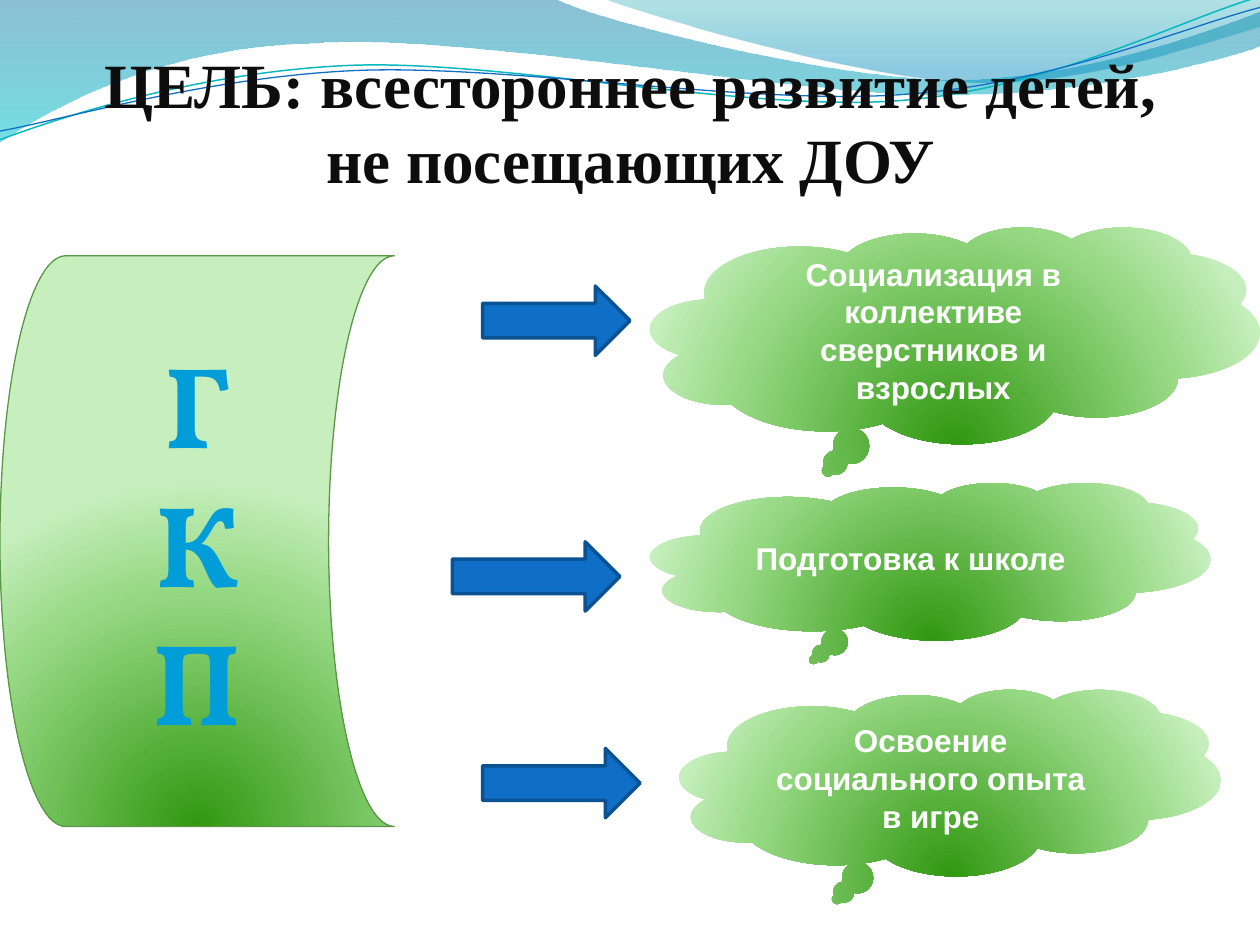
from math import cos, radians, sin
from lxml.etree import SubElement
from pptx import Presentation
from pptx.dml.color import RGBColor
from pptx.enum.shapes import MSO_SHAPE
from pptx.enum.text import MSO_ANCHOR, PP_ALIGN
from pptx.oxml import parse_xml
from pptx.oxml.ns import nsdecls, qn
from pptx.util import Inches, Pt

GREEN = [(0, "319811", 100), (68, "95D882", 100), (100, "C6EFBD", 100)]
RADIAL = '<a:path path="circle"><a:fillToRect l="50000" t="130000" r="50000" b="-30000"/></a:path>'
DOWN = '<a:lin ang="5400000" scaled="0"/>'


def color(code):
    return RGBColor.from_string(code)


def write(shape, text, size=18, font="Arial", ink="FFFFFF", anchor=MSO_ANCHOR.MIDDLE, space=0):
    frame = shape.text_frame
    frame.word_wrap = True
    frame.vertical_anchor = anchor
    para = frame.paragraphs[0]
    para.text = text
    para.alignment = PP_ALIGN.CENTER
    for run in para.runs:
        run.font.size = Pt(size)
        run.font.name = font
        run.font.bold = True
        run.font.color.rgb = color(ink)
        if space:
            run.font._element.set("spc", str(space))
    return frame


def turn(point, pivot, angle):
    dx, dy = point[0] - pivot[0], point[1] - pivot[1]
    c, s = cos(radians(angle)), sin(radians(angle))
    return pivot[0] + c * dx - s * dy, pivot[1] + s * dx + c * dy


def bend(shape, parts):
    route = next(shape._element.iter(qn("a:path")))
    lines = iter(route.findall(qn("a:lnTo")))
    for part in parts:
        first = next(lines)
        if len(part) == 6:
            curve = SubElement(route, qn("a:cubicBezTo"))
            route.replace(first, curve)
            curve.append(first[0])
            for line in (next(lines), next(lines)):
                curve.append(line[0])
                route.remove(line)


class Deck:
    def __init__(self):
        self.file = Presentation()
        self.file.slide_width, self.file.slide_height = Inches(10), Inches(7.5)
        self.slide = self.file.slides.add_slide(self.file.slide_layouts[6])
        self.shapes = self.slide.shapes

    def style(self, shape, fill=None, line=None, width=1, stops=None, mode=RADIAL):
        shape.shadow.inherit = False
        if fill:
            shape.fill.solid()
            shape.fill.fore_color.rgb = color(fill)
        else:
            shape.fill.background()
        if line:
            shape.line.color.rgb = color(line)
            shape.line.width = Pt(width)
        else:
            shape.line.fill.background()
        if stops:
            items = "".join(
                f'<a:gs pos="{pos * 1000}"><a:srgbClr val="{code}"><a:alpha val="{alpha * 1000}"/></a:srgbClr></a:gs>'
                for pos, code, alpha in stops)
            props = shape._element.spPr
            props.replace(props.find(qn("a:noFill")), parse_xml(
                f'<a:gradFill {nsdecls("a")} rotWithShape="1"><a:gsLst>{items}</a:gsLst>{mode}</a:gradFill>'))
        return shape

    def shape(self, kind, box, **look):
        return self.style(self.shapes.add_shape(kind, *map(Inches, box)), **look)

    def free(self, start, parts, closed=False, pivot=(5, 0.58), angle=0, **look):
        points = [start] + [part[i:i + 2] for part in parts for i in range(0, len(part), 2)]
        points = [tuple(map(Inches, turn(point, pivot, angle))) for point in points]
        build = self.shapes.build_freeform(*points[0])
        build.add_line_segments(points[1:], close=closed)
        shape = build.convert_to_shape()
        bend(shape, parts)
        shape.rotation = -angle
        self.style(shape, **look)

    def wave(self, start, parts, stops):
        self.free(start, parts, closed=True, stops=stops, mode=DOWN)

    def title(self, text, box):
        frame = write(self.shapes.add_textbox(*map(Inches, box)), text, size=36,
                      font="Times New Roman", ink="0D0D0D", anchor=MSO_ANCHOR.BOTTOM)
        frame.margin_left = frame.margin_right = frame.margin_bottom = 0

    def arrow(self, box):
        self.shape(MSO_SHAPE.RIGHT_ARROW, box, fill="0F6FC6", line="0B5292", width=2)

    def cloud(self, text, box):
        write(self.shape(MSO_SHAPE.CLOUD_CALLOUT, box, stops=GREEN), text)

    def scroll(self, text, box):
        shape = self.shape(MSO_SHAPE.FLOWCHART_STORED_DATA, box, line="5B9747", width=0.75, stops=GREEN)
        frame = write(shape, text, size=66, font="Vollkorn", ink="009DD9", space=50)
        frame._element.bodyPr.set("vert", "wordArtVert")


def main():
    deck = Deck()
    deck.wave((0, 0), [
        (4.4, -0.01), (4.76, 0.17, 6.64, 0.63, 7.58, 0.63), (8.53, 0.63, 9.58, 0.26, 10, 0.09),
        (10.01, 0.36), (9.83, 0.44, 8.7, 0.76, 7.46, 0.75), (6.22, 0.75, 3.82, 0.28, 2.57, 0.34),
        (1.29, 0.36, 0.46, 0.83, -0.01, 1.13),
    ], [(0, "0074A1", 45), (100, "00C6CF", 55)])
    deck.wave((4.79, -0.01), [
        (5.09, 0.11, 6.82, 0.62, 7.69, 0.65), (8.56, 0.69, 9.61, 0.32, 10, 0.21), (10, 0),
    ], [(0, "00A1A9", 30), (80, "008BBF", 45)])
    deck.free((0, 1.11), [
        (0.48, 0.93, 1.58, 0.57, 2.77, 0.52), (3.95, 0.47, 5.93, 0.89, 7.13, 0.8),
        (8.33, 0.71, 9.38, 0.15, 9.98, -0.02),
    ], angle=2.7, line="0AB8BF", width=0.85)
    deck.free((0, 1.04), [
        (0.47, 0.96, 1.64, 0.61, 2.83, 0.56), (4.03, 0.51, 5.97, 0.84, 7.17, 0.75),
        (8.36, 0.67, 9.41, 0.21, 10, 0.06),
    ], angle=2.7, line="0F6FC6", width=0.75)
    deck.title("ЦЕЛЬ: всестороннее развитие детей,\vне посещающих ДОУ", (0.39, 0.23, 9.23, 1.33))
    for left, top, width in [(3.83, 2.27, 1.17), (3.59, 4.3, 1.33), (3.83, 5.94, 1.25)]:
        deck.arrow((left, top, width, 0.55))
    for text, box in [
        ("Социализация в коллективе сверстников и взрослых", (5.16, 1.8, 4.84, 1.72)),
        ("Подготовка к школе", (5.16, 3.83, 4.45, 1.25)),
        ("Освоение социального опыта в игре", (5.39, 5.47, 4.3, 1.48)),
    ]:
        deck.cloud(text, box)
    deck.scroll("ГКП", (0, 2.03, 3.13, 4.53))
    deck.file.save("out.pptx")


if __name__ == "__main__":
    main()
